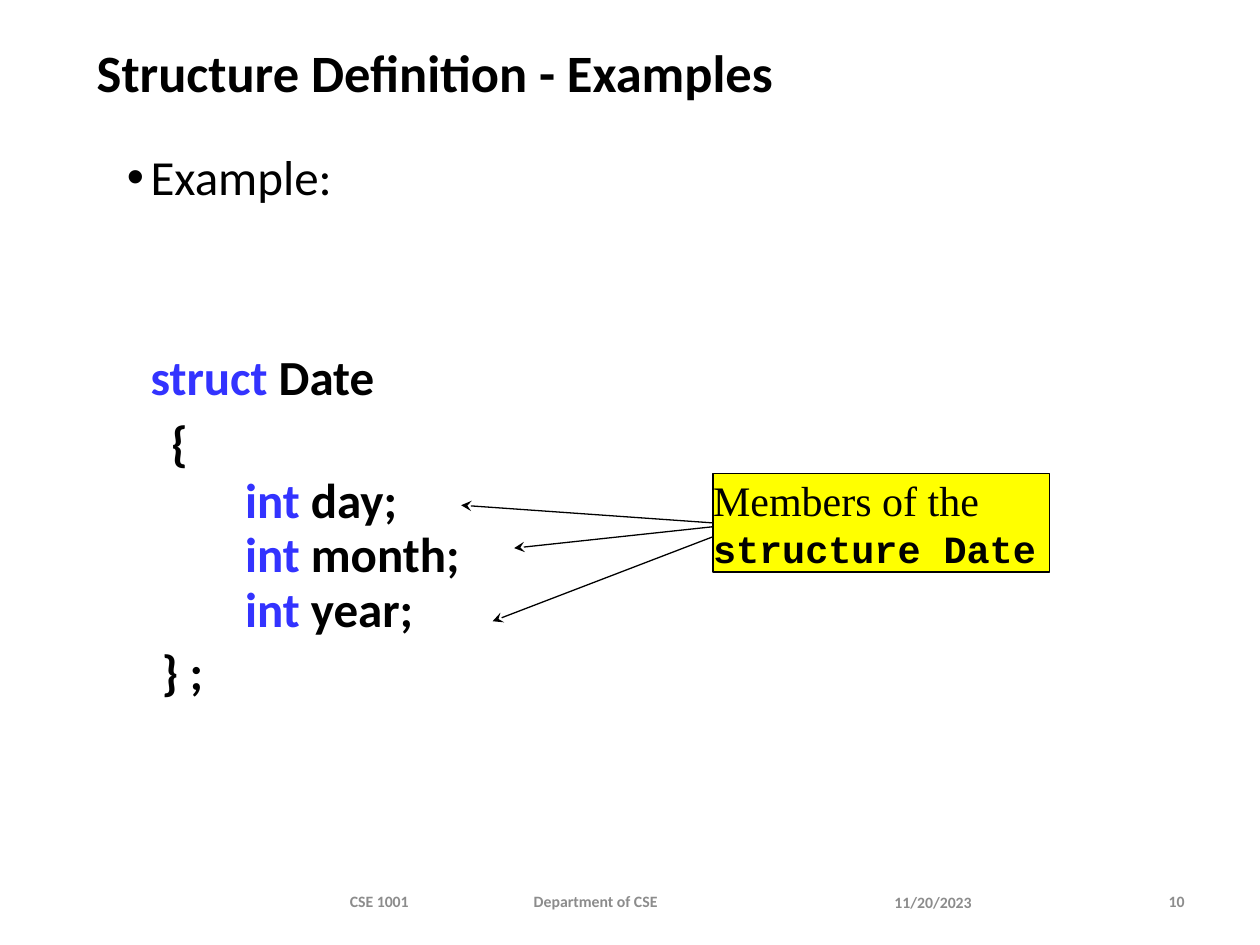
from pptx import Presentation
from pptx import util as u
from pptx.dml.color import RGBColor
from pptx.enum import shapes, text
from pptx.oxml.ns import qn
from lxml import etree

Pt = u.Pt
COLORS = {"text": "000000", "keyword": "3333FF", "footer": "8C8C8C",
          "callout": "FFFF00", "background": "FFFFFF"}


def style_run(run, size, color, bold=True, name="Calibri"):
    run.font.size = Pt(size)
    run.font.bold = bold
    run.font.name = name
    run.font.color.rgb = RGBColor.from_string(COLORS[color])


def add_text(left, top, width, height, content, size, color, align=text.PP_ALIGN.LEFT):
    box = slide.shapes.add_textbox(Pt(left), Pt(top), Pt(width), Pt(height))
    frame = box.text_frame
    frame.word_wrap = True
    frame.vertical_anchor = text.MSO_ANCHOR.MIDDLE
    frame.text = content
    paragraph = frame.paragraphs[0]
    paragraph.alignment = align
    style_run(paragraph.runs[0], size, color)
    return box


presentation = Presentation()
presentation.slide_width, presentation.slide_height = Pt(720), Pt(540)
slide = presentation.slides.add_slide(presentation.slide_layouts[6])
slide.background.fill.solid()
slide.background.fill.fore_color.rgb = RGBColor.from_string(COLORS["background"])

# Title
title = add_text(48.2, 21.6, 522, 43.2, "Structure Definition - Examples", 30, "text")
title.text_frame.paragraphs[0].line_spacing = 0.9

# Body: bullet line, then the code
body = add_text(65.5, 84.2, 606, 408, "Example:", 28, "text")
frame = body.text_frame
frame.vertical_anchor = text.MSO_ANCHOR.TOP
bullet_line = frame.paragraphs[0]
bullet_line.runs[0].font.bold = False
bullet_line.line_spacing = 0.9
properties = bullet_line._p.get_or_add_pPr()
properties.set("marL", str(Pt(13.5)))
properties.set("indent", str(-Pt(13.5)))
etree.SubElement(properties, qn("a:buFont")).set("typeface", "Arial")
etree.SubElement(properties, qn("a:buChar")).set("char", "•")

# keyword, rest of the line, left margin, line spacing, space before
code_lines = [
    ("struct ", "Date", 13.5, 0.9, 84),
    ("", "    {", 0, 0.9, 7.5),
    ("int ", "day;", 67.5, 0.7, 7.5),
    ("int ", "month;", 67.5, 0.7, 7.5),
    ("int ", "year;", 67.5, 0.7, 7.5),
    ("", " } ;", 13.5, 0.9, 7.5),
]
for keyword, rest, margin, line_spacing, space_before in code_lines:
    paragraph = frame.add_paragraph()
    paragraph.line_spacing = line_spacing
    paragraph.space_before = Pt(space_before)
    paragraph._p.get_or_add_pPr().set("marL", str(Pt(margin)))
    for content, color in ((keyword, "keyword"), (rest, "text")):
        if content:
            run = paragraph.add_run()
            run.text = content
            style_run(run, 28, color)

# Callout
callout = slide.shapes.add_shape(shapes.MSO_SHAPE.RECTANGLE,
                                 Pt(407.5), Pt(270.7), Pt(192.2), Pt(56.2))
callout.shadow.inherit = False
callout.fill.solid()
callout.fill.fore_color.rgb = RGBColor.from_string(COLORS["callout"])
callout.line.color.rgb = RGBColor.from_string(COLORS["text"])
callout.line.width = Pt(0.75)
frame = callout.text_frame
frame.word_wrap = True
frame.vertical_anchor = text.MSO_ANCHOR.MIDDLE
frame.margin_left = frame.margin_top = frame.margin_right = frame.margin_bottom = 0
paragraph = frame.paragraphs[0]
paragraph.alignment = text.PP_ALIGN.LEFT
for content, size, bold, name in (("Members of the ", 24, False, "Times New Roman"),
                                  ("structure Date", 22, True, "Courier New")):
    run = paragraph.add_run()
    run.text = content
    style_run(run, size, "text", bold, name)

# Arrows from the callout to the members; the first leaves the middle of its side
for start_y, end_x, end_y in ((298.8, 263.5, 288.7), (301, 293.8, 313.2), (306.7, 281.5, 355)):
    arrow = slide.shapes.add_connector(shapes.MSO_CONNECTOR.STRAIGHT,
                                       Pt(407.5), Pt(start_y), Pt(end_x), Pt(end_y))
    if start_y == 298.8:
        arrow.begin_connect(callout, 1)
    arrow.line.color.rgb = RGBColor.from_string(COLORS["text"])
    arrow.line.width = Pt(0.75)
    etree.SubElement(arrow.line._get_or_add_ln(), qn("a:tailEnd")).set("type", "stealth")
    etree.SubElement(arrow._element.spPr, qn("a:effectLst"))

# Footer
for left, top, width, content, align in (
        (192.8, 500.4, 80, "CSE 1001", text.PP_ALIGN.LEFT),
        (297.9, 500.4, 120, "Department of CSE", text.PP_ALIGN.LEFT),
        (504, 501.1, 108, "11/20/2023", text.PP_ALIGN.LEFT),
        (630, 500.4, 54, "10", text.PP_ALIGN.RIGHT)):
    add_text(left, top, width, 28.8, content, 9, "footer", align)

presentation.save("out.pptx")
